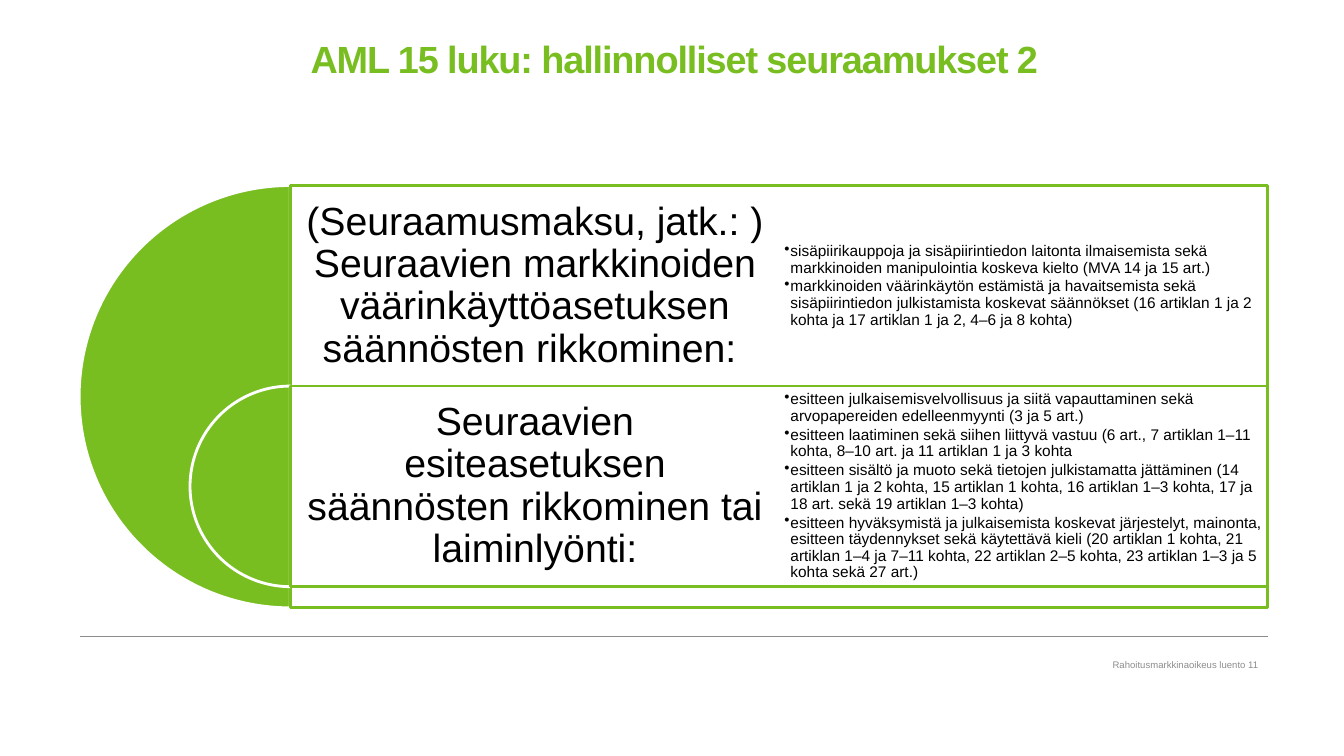
from lxml import etree
from pptx import Presentation
from pptx.dml.color import RGBColor
from pptx.enum.shapes import MSO_CONNECTOR, MSO_SHAPE
from pptx.enum.text import MSO_ANCHOR, MSO_AUTO_SIZE, PP_ALIGN
from pptx.oxml.ns import qn
from pptx.util import Inches, Pt

GREEN = RGBColor(0x78, 0xBE, 0x20)
WHITE = RGBColor(0xFF, 0xFF, 0xFF)
BLACK = RGBColor(0x00, 0x00, 0x00)
GREY = RGBColor(0x8C, 0x8C, 0x8C)
CENTER, RIGHT = PP_ALIGN.CENTER, PP_ALIGN.RIGHT
TOP, MIDDLE = MSO_ANCHOR.TOP, MSO_ANCHOR.MIDDLE
PIE, RECT = MSO_SHAPE.PIE, MSO_SHAPE.RECTANGLE

LEFT, WIDE = 0.79, 11.79    # content area
AXIS, UP = 2.88, 1.84       # left edge and top of the rows
ROW, COL = 1.99, 4.85       # row height, column width
SPAN = 9.69                 # width of a row's frame

ROWS = [
    (4.19,
     "(Seuraamusmaksu, jatk.: ) Seuraavien markkinoiden "
     "väärinkäyttöasetuksen säännösten rikkominen: ",
     ["sisäpiirikauppoja ja sisäpiirintiedon laitonta ilmaisemista sekä "
      "markkinoiden manipulointia koskeva kielto (MVA 14 ja 15 art.)",
      "markkinoiden väärinkäytön estämistä ja havaitsemista sekä "
      "sisäpiirintiedon julkistamista koskevat säännökset (16 artiklan 1 ja 2 "
      "kohta ja 17 artiklan 1 ja 2, 4–6 ja 8 kohta)"]),
    (ROW,
     "Seuraavien esiteasetuksen säännösten rikkominen tai laiminlyönti:",
     ["esitteen julkaisemisvelvollisuus ja siitä vapauttaminen sekä "
      "arvopapereiden edelleenmyynti (3 ja 5 art.)",
      "esitteen laatiminen sekä siihen liittyvä vastuu (6 art., 7 artiklan "
      "1–11 kohta, 8–10 art. ja 11 artiklan 1 ja 3 kohta",
      "esitteen sisältö ja muoto sekä tietojen julkistamatta jättäminen (14 "
      "artiklan 1 ja 2 kohta, 15 artiklan 1 kohta, 16 artiklan 1–3 kohta, 17 "
      "ja 18 art. sekä 19 artiklan 1–3 kohta)",
      "esitteen hyväksymistä ja julkaisemista koskevat järjestelyt, mainonta, "
      "esitteen täydennykset sekä käytettävä kieli (20 artiklan 1 kohta, 21 "
      "artiklan 1–4 ja 7–11 kohta, 22 artiklan 2–5 kohta, 23 artiklan 1–3 ja "
      "5 kohta sekä 27 art.)"]),
]

prs = Presentation()
prs.slide_width, prs.slide_height = Inches(13.33), Inches(7.5)
slide = prs.slides.add_slide(prs.slide_layouts[5])
shapes = slide.shapes


def write(box, texts, size, color, pads, align=None, anchor=MIDDLE,
          lead=0.9, after=0):
    """Fill a text shape with one paragraph per text; return its paragraphs."""
    frame = box.text_frame
    frame.word_wrap = True
    frame.auto_size = MSO_AUTO_SIZE.NONE
    frame.vertical_anchor = anchor
    (frame.margin_left, frame.margin_top,
     frame.margin_right, frame.margin_bottom) = [Inches(pad) for pad in pads]
    for i, text in enumerate(texts):
        par = frame.add_paragraph() if i else frame.paragraphs[0]
        par.alignment, par.line_spacing = align, lead
        par.space_before, par.space_after = Pt(0), Pt(after)
        run = par.add_run()
        run.text = text
        run.font.name, run.font.size = "Arial", Pt(size)
        run.font.color.rgb = color
    return frame.paragraphs


def draw(kind, x, y, w, h, fill, edge):
    shape = shapes.add_shape(kind, Inches(x), Inches(y), Inches(w), Inches(h))
    shape.shadow.inherit = False
    shape.fill.solid()
    shape.fill.fore_color.rgb = fill
    shape.line.color.rgb = edge
    shape.line.width = Pt(2)
    return shape


# Title
title = shapes.title
title.left, title.top = Inches(LEFT), Inches(0.42)
title.width, title.height = Inches(WIDE), Inches(1.31)
pars = write(title, ["AML 15 luku: hallinnolliset seuraamukset 2"], 27, GREEN,
             [0] * 4, CENTER, TOP, 0.85)
font = pars[0].runs[0].font
font.bold = True
font._element.set("spc", "-80")

# Footer rule
rule = shapes.add_connector(MSO_CONNECTOR.STRAIGHT, Inches(LEFT), Inches(6.31),
                            Inches(LEFT + WIDE), Inches(6.31))
rule.line.color.rgb = GREY
rule.line.width = Pt(0.5)
etree.SubElement(rule._element.spPr, qn("a:effectLst"))

# Rows: half disc, frame, heading and bullets
for i, (disc, head, points) in enumerate(ROWS):
    y = UP + i * ROW
    pie = draw(PIE, AXIS - disc / 2, y, disc, disc, GREEN, WHITE)
    pie.adjustments[0], pie.adjustments[1] = 54, 162
    frame = draw(RECT, AXIS, y, SPAN, UP + ROWS[0][0] - y if i == 0 else ROW,
                 WHITE, GREEN)
    tint = frame._element.spPr.find(qn("a:solidFill"))[0]
    etree.SubElement(tint, qn("a:alpha"), val="90000")

    left, right = [shapes.add_textbox(Inches(AXIS + j * COL), Inches(y),
                                      Inches(COL), Inches(ROW))
                   for j in range(2)]
    write(left, [head], 28, BLACK, [0.12] * 4, CENTER)
    for par in write(right, points, 11, BLACK, [0.05] * 4, after=1.65):
        props = par._p.get_or_add_pPr()
        props.set("marL", str(Inches(0.06)))
        props.set("indent", str(-Inches(0.06)))
        etree.SubElement(props, qn("a:buChar"), char="•")

# Footer text
foot = shapes.add_textbox(Inches(7.2), Inches(6.51), Inches(5.28), Inches(0.17))
write(foot, ["Rahoitusmarkkinaoikeus luento 11"], 6.8, GREY,
      [0.1, 0.05, 0, 0.05], RIGHT, lead=1.0)

prs.save("out.pptx")
